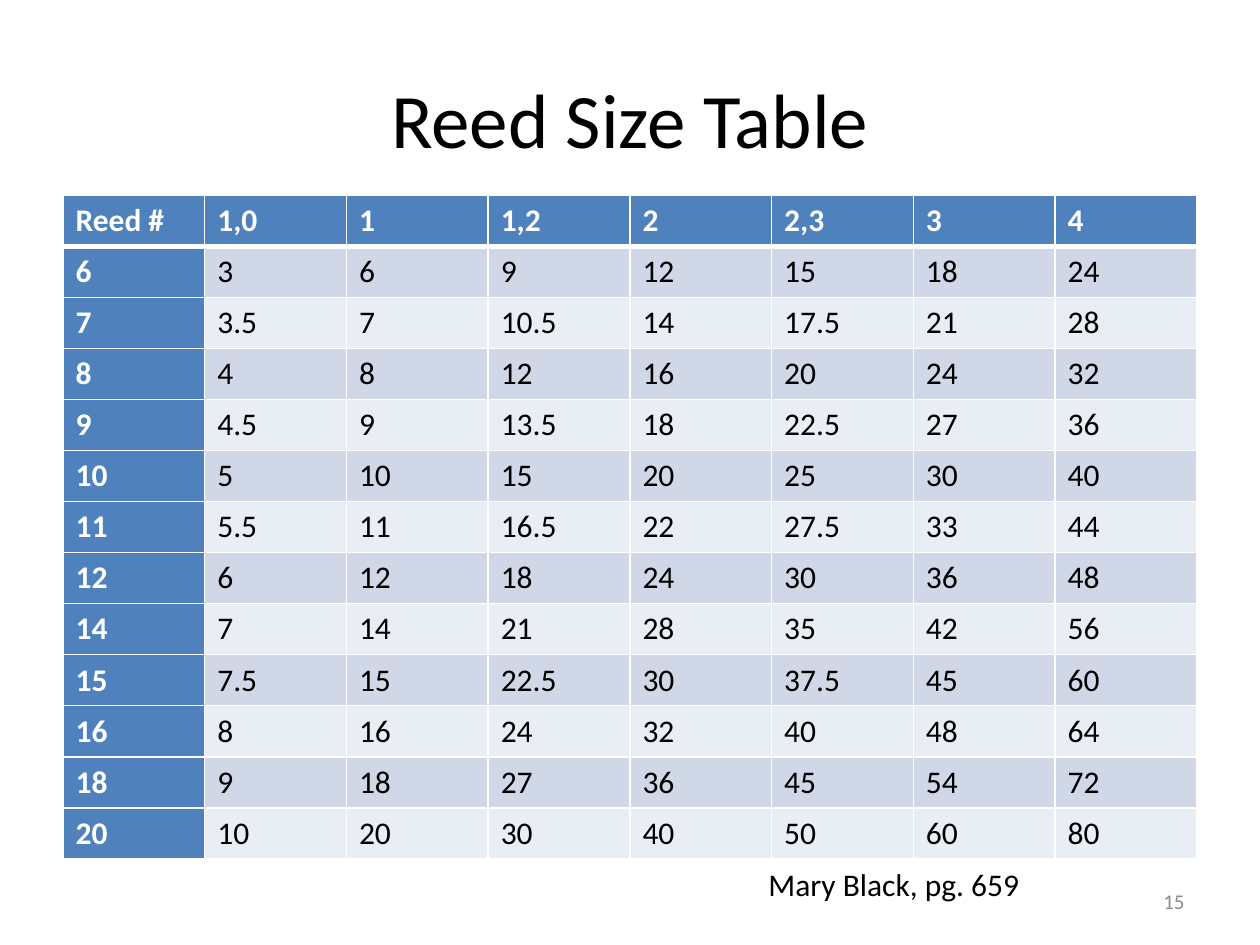
import lxml.etree
import pptx
import pptx.dml.color
import pptx.enum.text
import pptx.oxml.ns
import pptx.util

WIDTH, HEIGHT = 10, 7.5
FONT = "Calibri"
COLORS = {
    "header": "4F81BD",
    "odd_band": "D0D8E8",
    "even_band": "E9EDF4",
    "white": "FFFFFF",
    "black": "000000",
    "gray": "8C8C8C",
}
SLEYS = ["1,0", "1", "1,2", "2", "2,3", "3", "4"]
REEDS = [6, 7, 8, 9, 10, 11, 12, 14, 15, 16, 18, 20]
ALIGN = pptx.enum.text.PP_ALIGN
ANCHOR = pptx.enum.text.MSO_ANCHOR


def rgb(name):
    """Return the named palette colour."""
    return pptx.dml.color.RGBColor.from_string(COLORS[name])


def place(left, top, width, height):
    """Turn shares of the slide's size into lengths."""
    return [pptx.util.Inches(share * side) for share, side in
            ((left, WIDTH), (top, HEIGHT), (width, WIDTH), (height, HEIGHT))]


def style_font(para, size, color, bold=False):
    """Set the font of a whole paragraph."""
    para.font.name = FONT
    para.font.size = pptx.util.Pt(size)
    para.font.bold = bold
    para.font.color.rgb = rgb(color)


def add_label(page, text, area, size, color="black", align=ALIGN.LEFT, anchor=ANCHOR.TOP):
    """Add a one-paragraph text box."""
    frame = page.shapes.add_textbox(*place(*area)).text_frame
    frame.word_wrap = True
    frame.vertical_anchor = anchor
    para = frame.paragraphs[0]
    para.text = text
    para.alignment = align
    style_font(para, size, color)


def add_border(cell, side, points):
    """Draw a solid white line on one side of a cell."""
    name = pptx.oxml.ns.qn
    line = lxml.etree.SubElement(cell._tc.get_or_add_tcPr(), name(f"a:ln{side}"),
                                 w=str(pptx.util.Pt(points)))
    fill = lxml.etree.SubElement(line, name("a:solidFill"))
    lxml.etree.SubElement(fill, name("a:srgbClr"), val=COLORS["white"])


def style_cell(cell, row, column):
    """Style a cell by its place in the table."""
    heading = row == 0 or column == 0
    band = "odd_band" if row % 2 else "even_band"
    thick_side = {0: "B", 1: "T"}.get(row)
    for side in "LRTB":
        add_border(cell, side, 3 if side == thick_side else 1)
    cell.fill.solid()
    cell.fill.fore_color.rgb = rgb("header" if heading else band)
    style_font(cell.text_frame.paragraphs[0], 18, "white" if heading else "black", heading)


def ends_per_dent(sley):
    """Average the ends threaded through successive dents."""
    dents = [int(ends) for ends in sley.split(",")]
    return sum(dents) / len(dents)


def add_reed_table(page, area):
    """Add the table of ends per inch for each reed and sley."""
    rows = [["Reed #", *SLEYS]]
    rows += [[str(reed), *(f"{reed * ends_per_dent(sley):g}" for sley in SLEYS)]
             for reed in REEDS]
    table = page.shapes.add_table(len(rows), len(rows[0]), *place(*area)).table
    table.first_col = True
    for row, values in enumerate(rows):
        for column, value in enumerate(values):
            cell = table.cell(row, column)
            cell.text = value
            style_cell(cell, row, column)


def main():
    """Build and save the reed size slide."""
    deck = pptx.Presentation()
    deck.slide_width = pptx.util.Inches(WIDTH)
    deck.slide_height = pptx.util.Inches(HEIGHT)
    page = deck.slides.add_slide(deck.slide_layouts[6])
    add_label(page, "Reed Size Table", (0.05, 0.04, 0.9, 0.17), 44,
              align=ALIGN.CENTER, anchor=ANCHOR.MIDDLE)
    add_reed_table(page, (0.05, 1.55 / HEIGHT, 0.9, 5.27 / HEIGHT))
    add_label(page, "Mary Black, pg. 659", (0.6, 6.82 / HEIGHT, 0.27, 0.4 / HEIGHT), 18)
    add_label(page, "15", (0.72, 6.95 / HEIGHT, 0.23, 0.4 / HEIGHT), 12, "gray",
              ALIGN.RIGHT, ANCHOR.MIDDLE)
    deck.save("out.pptx")


if __name__ == "__main__":
    main()
